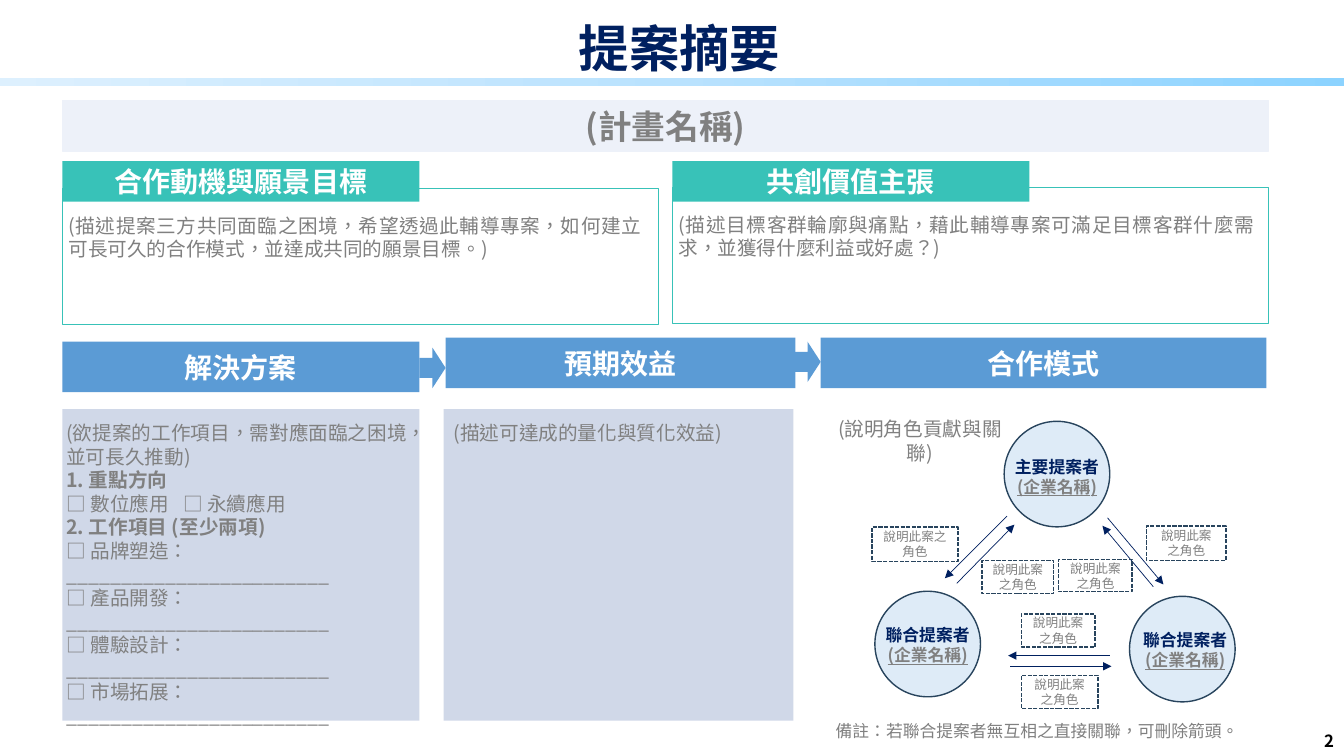
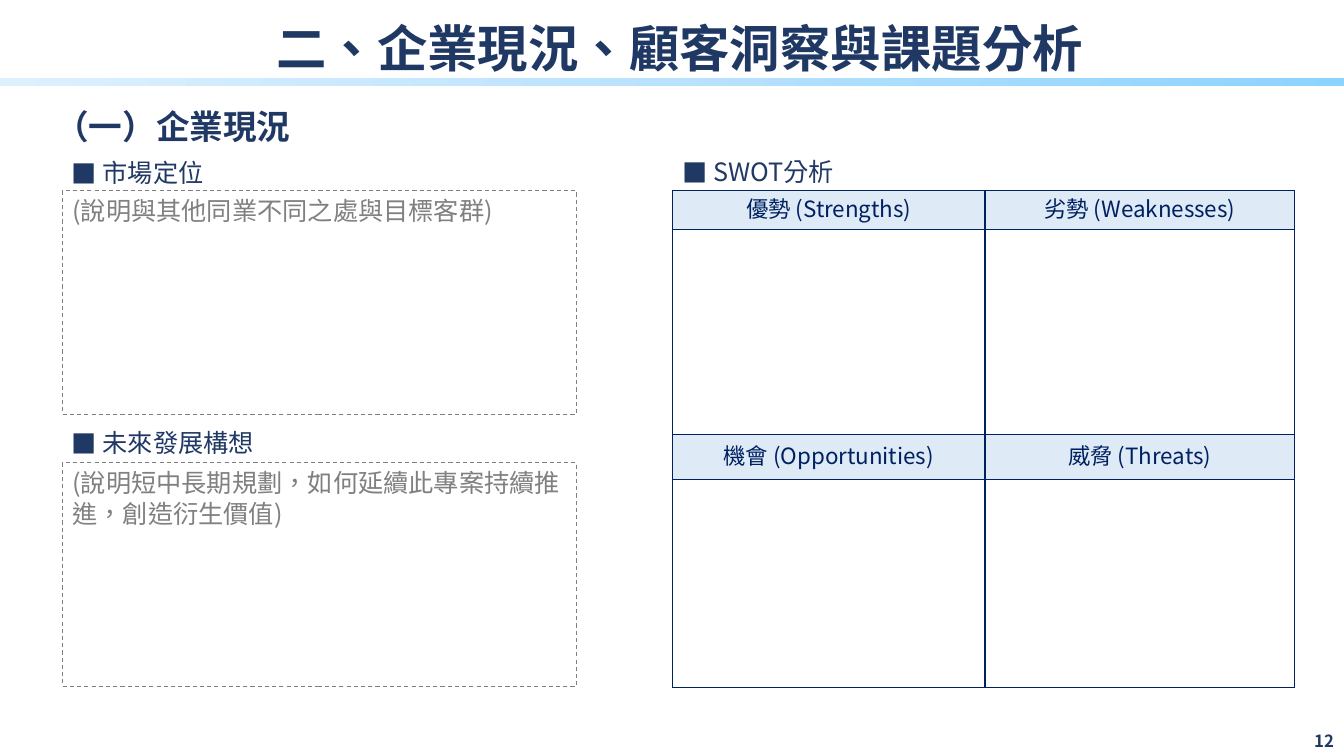
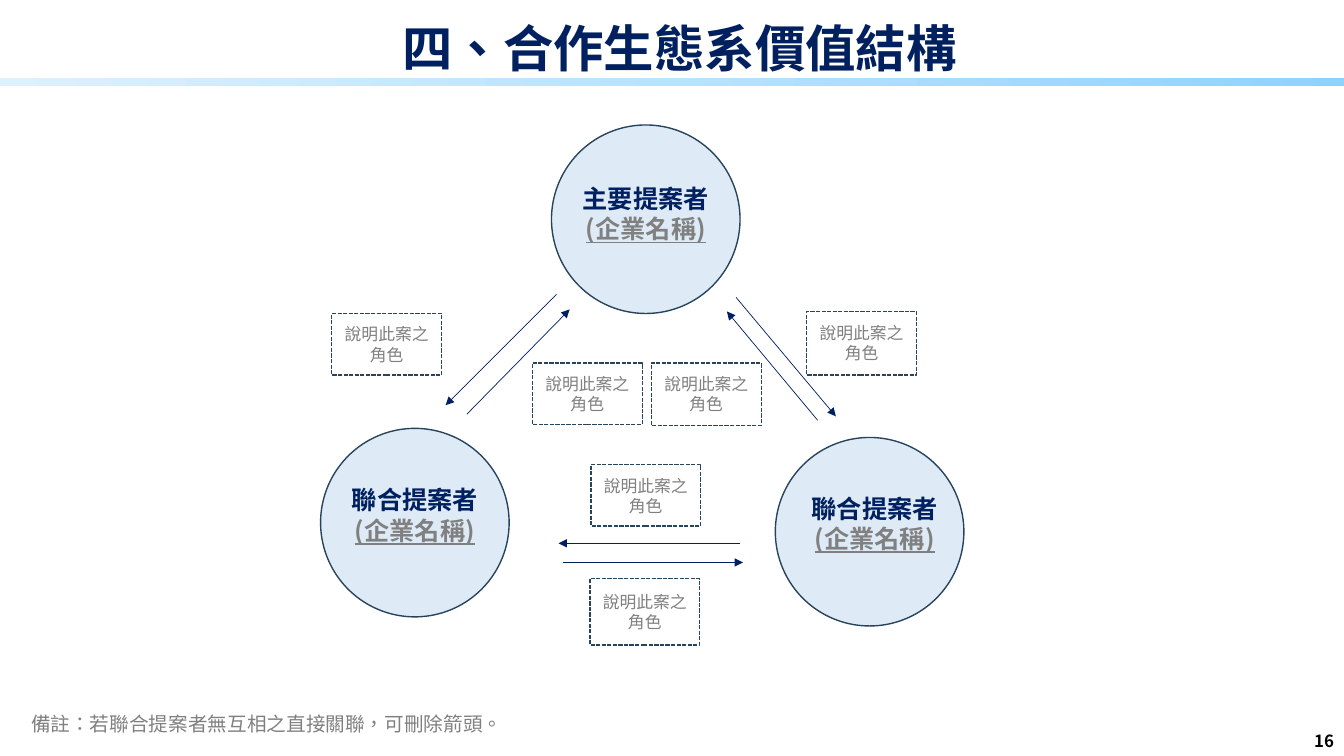
from copy import deepcopy
from dataclasses import dataclass

from lxml import etree
from pptx import Presentation
from pptx.dml.color import RGBColor
from pptx.enum import dml, shapes, text
from pptx.oxml.ns import qn
from pptx.util import Inches, Pt

LEFT, CENTER, RIGHT, JUSTIFY = (text.PP_ALIGN.LEFT, text.PP_ALIGN.CENTER,
                                text.PP_ALIGN.RIGHT, text.PP_ALIGN.JUSTIFY)
TOP, MIDDLE = text.MSO_ANCHOR.TOP, text.MSO_ANCHOR.MIDDLE
RECT, OVAL, ARROW = (shapes.MSO_SHAPE.RECTANGLE, shapes.MSO_SHAPE.OVAL,
                     shapes.MSO_SHAPE.RIGHT_ARROW)


@dataclass(frozen=True)
class Theme:
    font: str = "Noto Sans CJK SC"
    navy: str = "002060"
    indigo: str = "203864"
    black: str = "000000"
    white: str = "FFFFFF"
    grey: str = "808080"
    teal: str = "38C2B8"
    blue: str = "5B9BD5"
    panel: str = "D0D8E8"
    plan: str = "EDF1F9"
    pale: str = "DEEBF7"
    outline: str = "28445D"
    band: tuple = ("8CD3FF", "B9E2FE", "DDF0FE")
    title: int = 36
    heading: int = 24
    section: int = 20
    large: int = 18
    cell: int = 16
    body: int = 14
    small: int = 12
    tiny: int = 9
    leading: float = 1.2


T = Theme()

# Content: places are (left, top, width, height) in inches.
SUMMARY = "提案摘要"
PLAN = ("(計畫名稱)", (0.62, 1, 11.96, 0.5))
MOTIVES = [  # heading, left, frame top, text, text place
    ("共創價值主張", 6.67, 1.86,
     "(描述目標客群輪廓與痛點，藉此輔導專案可滿足目標客群什麼需求，並獲得什麼利益或好處？)",
     (6.63, 2.06, 5.91, 1.04)),
    ("合作動機與願景目標", 0.62, 1.87,
     "(描述提案三方共同面臨之困境，希望透過此輔導專案，如何建立可長可久的合作模式，並達成共同的願景目標。)",
     (0.58, 2.07, 5.88, 1.04)),
]
STEPS = [("解決方案", 0.62, 3.39, 3.54), ("預期效益", 4.42, 3.35, 3.47),
         ("合作模式", 8.14, 3.35, 4.42)]
STEP_ARROWS = [(4.16, 3.45), (7.88, 3.39)]
PANELS = [(0.62, 3.54), (4.4, 3.47)]
BLANK_LINE = "_" * 24
BOLD = {"bold": True}
SOLUTION = [
    ["(欲提案的工作項目，需對應面臨之困境，並可長久推動)", "\n", ("1. 重點方向", BOLD)],
    ["□ 數位應用\t□ 永續應用", "\n", ("2. 工作項目 (至少兩項)", BOLD), "\n",
     "□ 品牌塑造：" + BLANK_LINE],
] + [f"□ {item}：{BLANK_LINE}" for item in ("產品開發", "體驗設計", "市場拓展")]
BENEFIT = "(描述可達成的量化與質化效益)"
ROLES = "(說明角色貢獻與關聯)"
REMARK = "備註：若聯合提案者無互相之直接關聯，可刪除箭頭。"

STATUS = "二、企業現況、顧客洞察與課題分析"
STATUS_PART = "（一）企業現況"
TOPICS = [("市場定位", 0.61, 1.51), ("未來發展構想", 0.61, 4.19), ("SWOT分析", 6.67, 1.5)]
PROMPTS = [("(說明與其他同業不同之處與目標客群)", 1.89),
           ("(說明短中長期規劃，如何延續此專案持續推進，創造衍生價值)", 4.59)]
SWOT = [["優勢 (Strengths)", "劣勢 (Weaknesses)"], ["", ""],
        ["機會 (Opportunities)", "威脅 (Threats)"], ["", ""]]
SWOT_COLS, SWOT_ROWS = (3.1, 3.07), (0.39, 2.03, 0.45, 2.06)

STRUCTURE = "四、合作生態系價值結構"
# Full-size diagram, measured from the corner of the upper circle.
CIRCLE = 1.87
COMPANY = "(企業名稱)"
PARTNERS = [  # name, circle corner, label corner
    ("主要提案者", (0, 0), (-0.22, 0.53)),
    ("聯合提案者", (-2.29, 3.01), (-2.51, 3.52)),
    ("聯合提案者", (2.22, 3.1), (2.05, 3.6)),
]
LABEL = (2.31, 0.87)
FLOWS = [((0.05, 1.68), (-1.05, 2.78)), ((-0.84, 2.87), (0.18, 1.83)),
         ((1.83, 1.71), (2.82, 2.89)), ((2.64, 2.93), (1.74, 1.85)),
         ((1.87, 4.15), (0.07, 4.15)), ((0.11, 4.34), (1.9, 4.34))]
ROLE = "說明此案之角色"
SMALL_ROLES = [(8.65, 5.23, 0.85, 0.34), (9.74, 5.56, 0.71, 0.33),
               (10.5, 5.55, 0.73, 0.32), (11.37, 5.22, 0.79, 0.34),
               (10.13, 6.7, 0.76, 0.33), (10.13, 6.09, 0.73, 0.33)]
LARGE_ROLES = [(3.29, 3.11, 1.09, 0.61), (5.28, 3.6, 1.09, 0.61),
               (6.46, 3.6, 1.09, 0.62), (8, 3.09, 1.09, 0.63),
               (5.85, 5.74, 1.09, 0.66), (5.86, 4.61, 1.09, 0.61)]


def rgb(color):
    return RGBColor.from_string(color)


def child(parent, tag, **attributes):
    return etree.SubElement(parent, qn(tag), **attributes)


def style_run(run, size, color, bold=False, underline=False):
    font = run.font
    font.size, font.bold = Pt(size), bold
    font.color.rgb = rgb(color)
    font.name = T.font
    if underline:
        font.underline = True
    props = run._r.get_or_add_rPr()
    props.set("lang", "zh-TW")
    child(props, "a:ea", typeface=T.font)


def write(frame, paragraphs, size, color, bold=False, align=LEFT, anchor=TOP,
          spacing=None, bullet=None, tab=None):
    """Fill a frame; a paragraph is a string or a list of strings and (string, style)."""
    frame.word_wrap = True
    frame.vertical_anchor = anchor
    for index, content in enumerate(paragraphs):
        para = frame.add_paragraph() if index else frame.paragraphs[0]
        para.alignment = align
        para.line_spacing = spacing or Pt(round(size * T.leading, 1))
        props = para._p.get_or_add_pPr()
        if bullet:
            props.set("marL", str(Inches(0.31)))
            props.set("indent", str(-Inches(0.31)))
            child(props, "a:buFont", typeface=T.font)
            child(props, "a:buChar", char=bullet)
        if tab:
            child(child(props, "a:tabLst"), "a:tab", pos=str(Inches(tab)), algn="l")
        for piece in [content] if isinstance(content, str) else content:
            words, style = (piece, {}) if isinstance(piece, str) else piece
            if words == "\n":
                para.add_line_break()
                continue
            run = para.add_run()
            run.text = words
            style_run(run, **{"size": size, "color": color, "bold": bold, **style})


def add_text(slide, place, paragraphs, size, color, **options):
    box = slide.shapes.add_textbox(*map(Inches, place))
    write(box.text_frame, paragraphs, size, color, **options)
    return box


def add_box(slide, place, kind=RECT, fill=None, line=None, width=1, dash=None):
    box = slide.shapes.add_shape(kind, *map(Inches, place))
    box.shadow.inherit = False
    if fill:
        box.fill.solid()
        box.fill.fore_color.rgb = rgb(fill)
    else:
        box.fill.background()
    if line:
        box.line.color.rgb = rgb(line)
        box.line.width = Pt(width)
        if dash:
            box.line.dash_style = dash
    else:
        box.line.fill.background()
    return box


def add_heading(slide, place, words, fill):
    write(add_box(slide, place, fill=fill).text_frame, [words], T.section, T.white,
          bold=True, align=CENTER, anchor=MIDDLE)


def add_flow(slide, start, end):
    flow = slide.shapes.add_connector(shapes.MSO_CONNECTOR.STRAIGHT,
                                      *map(Inches, (*start, *end)))
    flow.line.color.rgb = rgb(T.navy)
    flow.line.width = Pt(0.5)
    child(flow.line._get_or_add_ln(), "a:tailEnd", type="triangle")
    child(flow._element.spPr, "a:effectLst")


def add_band(slide):
    band = add_box(slide, (-0.01, 0.77, 13.36, 0.08))
    band.fill.gradient()
    band.fill.gradient_angle = 180
    stops = band._element.spPr.find(".//" + qn("a:gsLst"))
    stops.insert(1, deepcopy(stops[0]))
    for index, (stop, color) in enumerate(zip(band.fill.gradient_stops, T.band)):
        stop.position = index / 2
        stop.color.rgb = rgb(color)


def add_slide(prs, title, number, title_color=T.navy, number_color=T.black):
    slide = prs.slides.add_slide(prs.slide_layouts[6])
    add_text(slide, (12.57, 7.1, 0.76, 0.5), [number], T.small, number_color,
             bold=True, align=RIGHT, anchor=MIDDLE)
    add_band(slide)
    add_text(slide, (0.99, 0.18, 11.5, 0.65), [title], T.title, title_color,
             bold=True, align=CENTER, anchor=MIDDLE, spacing=0.9)
    return slide


def add_ecosystem(slide, left, top, scale, name_size, role_size, roles):
    def at(point):
        return left + point[0] * scale, top + point[1] * scale

    for _, corner, _ in PARTNERS:
        add_box(slide, (*at(corner), CIRCLE * scale, CIRCLE * scale), OVAL,
                T.pale, T.outline)
    for start, end in FLOWS:
        add_flow(slide, at(start), at(end))
    for name, _, corner in PARTNERS:
        company = (COMPANY, {"color": T.grey, "underline": True})
        add_text(slide, (*at(corner), *(side * scale for side in LABEL)),
                 [name, [company]], name_size, T.navy, bold=True, align=CENTER)
    for place in roles:
        role = add_box(slide, place, line=T.outline, dash=dml.MSO_LINE.SQUARE_DOT)
        write(role.text_frame, [ROLE], role_size, T.grey, align=CENTER, anchor=MIDDLE)


def add_swot(slide):
    table = slide.shapes.add_table(
        len(SWOT_ROWS), len(SWOT_COLS), Inches(6.67), Inches(1.89),
        Inches(sum(SWOT_COLS)), Inches(sum(SWOT_ROWS))).table
    table.first_row = table.horz_banding = False
    for column, width in zip(table.columns, SWOT_COLS):
        column.width = Inches(width)
    for row, height, labels in zip(table.rows, SWOT_ROWS, SWOT):
        row.height = Inches(height)
        for cell, label in zip(row.cells, labels):
            cell.margin_left = cell.margin_right = Inches(0.07)
            cell.margin_top = cell.margin_bottom = 0
            props = cell._tc.get_or_add_tcPr()
            for side in ("a:lnL", "a:lnR", "a:lnT", "a:lnB"):
                border = child(props, side, w=str(Pt(1)))
                child(child(border, "a:solidFill"), "a:srgbClr", val=T.navy)
            if not label:
                cell.fill.background()
                continue
            cell.fill.solid()
            cell.fill.fore_color.rgb = rgb(T.pale)
            write(cell.text_frame, [label], T.cell, T.navy, align=CENTER)
            cell.vertical_anchor = MIDDLE


def build_summary(prs):
    slide = add_slide(prs, SUMMARY, "2")
    for _, left, top, _, _ in MOTIVES:
        add_box(slide, (left, top, 5.91, 1.35), line=T.teal)
    add_ecosystem(slide, 9.96, 4.18, 0.56, T.small, T.tiny, SMALL_ROLES)
    for name, left, top, width in STEPS:
        add_heading(slide, (left, top, width, 0.5), name, T.blue)
    for corner in STEP_ARROWS:
        add_box(slide, (*corner, 0.26, 0.4), ARROW, T.blue)
    for left, width in PANELS:
        add_box(slide, (left, 4.06, width, 3.09), fill=T.panel)
    name, place = PLAN
    write(add_box(slide, place, fill=T.plan, line=T.plan).text_frame, [name],
          T.heading, T.grey, bold=True, align=CENTER, anchor=MIDDLE)
    for heading, left, _, words, place in MOTIVES:
        add_heading(slide, (left, 1.6, 3.54, 0.4), heading, T.teal)
        add_text(slide, place, [words], T.body, T.grey, align=JUSTIFY)
    add_text(slide, (8.09, 4.09, 2.07, 0.34), [ROLES], T.body, T.grey, align=CENTER)
    add_text(slide, (0.56, 4.13, 3.65, 2.69), SOLUTION, T.body, T.grey, tab=1.16)
    add_text(slide, (4.4, 4.13, 3.4, 0.34), [BENEFIT], T.body, T.grey)
    add_text(slide, (8.19, 7.1, 4.67, 0.3), [REMARK], T.small, T.grey)


def build_status(prs):
    slide = add_slide(prs, STATUS, "12", T.indigo, T.indigo)
    add_text(slide, (0.45, 1, 2.76, 0.5), [STATUS_PART], T.heading, T.indigo, bold=True)
    for name, left, top in TOPICS:
        add_text(slide, (left, top, 2.72, 0.4), [name], T.large, T.indigo, bullet="■")
    add_swot(slide)
    for words, top in PROMPTS:
        prompt = add_box(slide, (0.62, top, 5.1, 2.22), line=T.grey, width=0.75,
                         dash=dml.MSO_LINE.DASH)
        write(prompt.text_frame, [words], T.large, T.grey)


def build_structure(prs):
    slide = add_slide(prs, STRUCTURE, "16")
    add_ecosystem(slide, 5.47, 1.24, 1, T.large, T.small, LARGE_ROLES)
    add_text(slide, (0.21, 7.01, 5.74, 0.34), [REMARK], T.body, T.grey)


def main():
    prs = Presentation()
    prs.slide_width, prs.slide_height = Inches(13.33), Inches(7.5)
    build_summary(prs)
    build_status(prs)
    build_structure(prs)
    prs.save("out.pptx")


if __name__ == "__main__":
    main()
